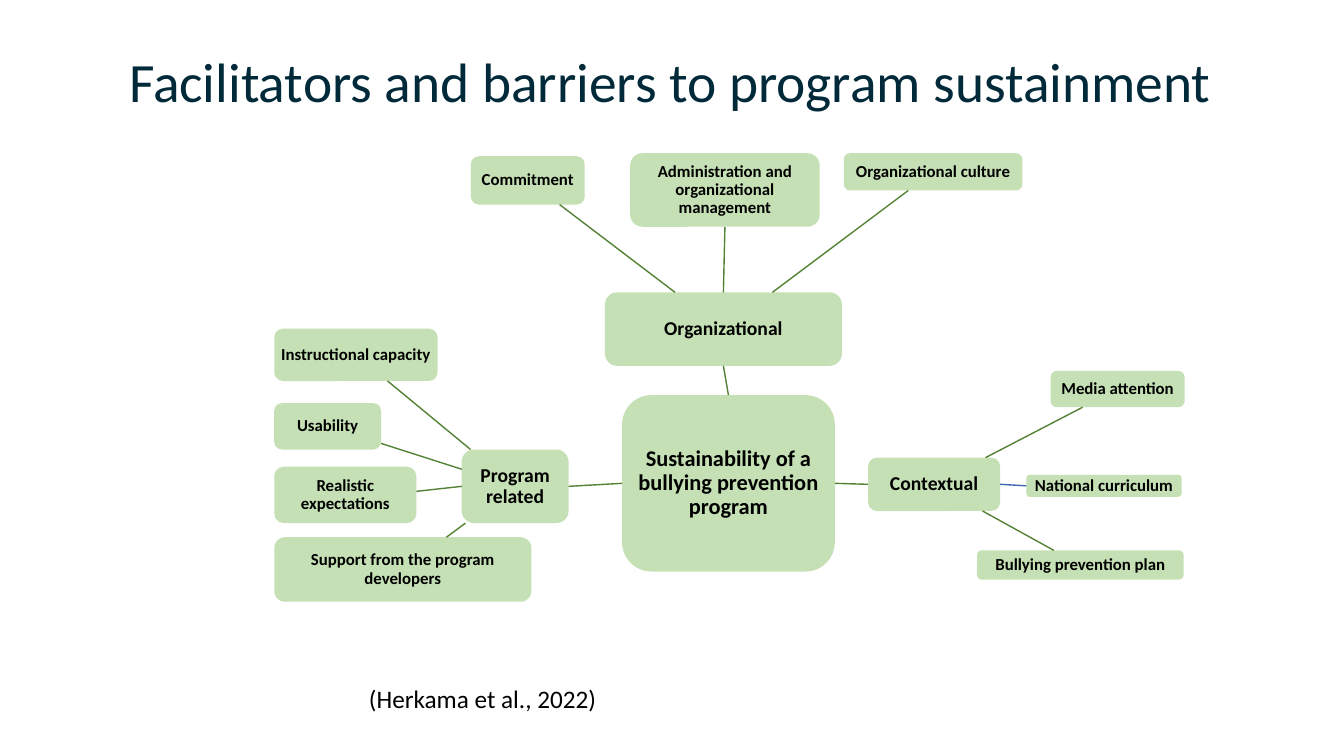
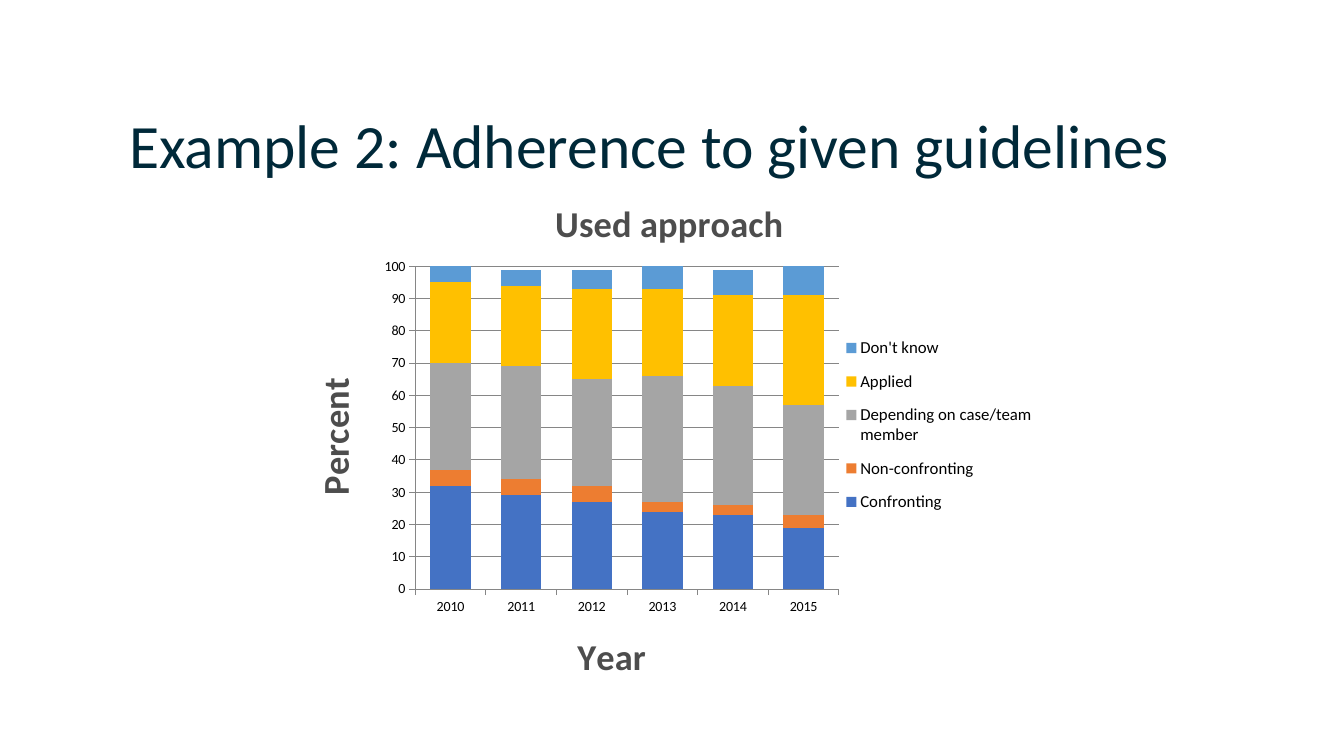
from dataclasses import dataclass

from lxml.etree import SubElement
from pptx import Presentation
from pptx.chart.data import CategoryChartData
from pptx.dml.color import RGBColor
from pptx.enum.chart import XL_CHART_TYPE, XL_LEGEND_POSITION, XL_TICK_MARK
from pptx.enum.shapes import MSO_CONNECTOR, MSO_SHAPE
from pptx.enum.text import MSO_ANCHOR, MSO_AUTO_SIZE, PP_ALIGN
from pptx.oxml.ns import qn
from pptx.util import Inches, Pt


@dataclass(frozen=True)
class Theme:
    """Colours in hex and type sizes in points."""
    font: str = "Calibri"
    title: str = "002939"
    text: str = "000000"
    node: str = "C5E0B4"
    link: str = "548235"
    accent_link: str = "3E67B2"
    heading: str = "4D4D4D"
    grid: str = "868686"
    series: tuple = ("4472C4", "ED7D31", "A5A5A5", "FFC000", "5B9BD5")
    core_size: float = 16
    hub_size: float = 14
    leaf_size: float = 12
    note_size: float = 18
    heading_size: float = 26
    tick_size: float = 10
    legend_size: float = 12


@dataclass(frozen=True)
class Box:
    """A rectangle in inches."""
    x: float
    y: float
    w: float
    h: float

    def inside(self, x, y, w, h):
        """Return a box placed relative to this one's corner."""
        return Box(self.x + x, self.y + y, w, h)

    def emu(self):
        """Return left, top, width and height as lengths."""
        return [Inches(v) for v in (self.x, self.y, self.w, self.h)]


T = Theme()

CORE = ("Sustainability of a bullying prevention program", (3.45, 2.4, 2.11, 1.75))
BRANCHES = [
    (("Organizational", (3.28, 1.38, 2.35, 0.73)), [
        ("Commitment", (1.95, 0.03, 1.13, 0.48)),
        ("Administration and organizational management", (3.53, 0, 1.88, 0.73)),
        ("Organizational culture", (5.65, 0, 1.77, 0.37)),
    ]),
    (("Contextual", (5.89, 3.02, 1.31, 0.53)), [
        ("National curriculum", (7.46, 3.19, 1.54, 0.22)),
        ("Bullying prevention plan", (6.97, 3.94, 2.05, 0.29)),
        ("Media attention", (7.7, 2.16, 1.33, 0.36)),
    ]),
    (("Program related", (1.86, 2.94, 1.06, 0.73)), [
        ("Instructional capacity", (0, 1.74, 1.62, 0.52)),
        ("Usability", (0, 2.48, 1.06, 0.46)),
        ("Realistic expectations", (0, 3.11, 1.41, 0.56)),
        ("Support from the program developers", (0, 3.81, 2.55, 0.64)),
    ]),
]
ACCENT_LEAF = "National curriculum"

YEARS = ["2010", "2011", "2012", "2013", "2014", "2015"]
APPROACHES = [
    ("Confronting", (32, 29, 27, 24, 23, 19)),
    ("Non-confronting", (5, 5, 5, 3, 3, 4)),
    ("Depending on case/team member", (33, 35, 33, 39, 37, 34)),
    ("Applied", (25, 25, 28, 27, 28, 34)),
    ("Don't know", (5, 5, 6, 8, 8, 9)),
]


def style_font(font, size, color, bold=False):
    """Apply the theme typeface with a size, colour and weight."""
    font.name = T.font
    font.size = Pt(size)
    font.bold = bold
    font.color.rgb = RGBColor.from_string(color)


def add_titled_slide(prs, text, box, size):
    """Add a title-only slide with its title in the given box."""
    s = prs.slides.add_slide(prs.slide_layouts[5])
    title = s.shapes.title
    title.left, title.top, title.width, title.height = box.emu()
    tf = title.text_frame
    tf.text = text
    tf.word_wrap = True
    tf.auto_size = MSO_AUTO_SIZE.NONE
    tf.vertical_anchor = MSO_ANCHOR.BOTTOM
    p = tf.paragraphs[0]
    p.alignment = PP_ALIGN.LEFT
    p.line_spacing = 0.9
    style_font(p.runs[0].font, size, T.title)
    return s


def add_node(s, text, box, size):
    """Draw one rounded box of the map with bold centred text."""
    sp = s.shapes.add_shape(MSO_SHAPE.ROUNDED_RECTANGLE, *box.emu())
    sp.shadow.inherit = False
    sp.fill.solid()
    sp.fill.fore_color.rgb = RGBColor.from_string(T.node)
    sp.line.fill.background()
    tf = sp.text_frame
    tf.text = text
    tf.word_wrap = True
    tf.vertical_anchor = MSO_ANCHOR.MIDDLE
    tf.margin_left = tf.margin_right = Inches(0.03)
    tf.margin_top = tf.margin_bottom = Inches(0.03)
    p = tf.paragraphs[0]
    p.alignment = PP_ALIGN.CENTER
    p.line_spacing = 0.9
    style_font(p.runs[0].font, size, T.text, True)
    return sp


def center(sp):
    """Return the middle point of a shape."""
    return sp.left + sp.width / 2, sp.top + sp.height / 2


def edge_point(sp, other):
    """Return where the line to another centre leaves a shape, and its side if at the middle."""
    (x, y), (ox, oy) = center(sp), center(other)
    dx, dy = ox - x, oy - y
    across = abs(dx) * sp.height > abs(dy) * sp.width
    scale = sp.width / 2 / abs(dx) if across else sp.height / 2 / abs(dy)
    offset = scale * (dy if across else dx)
    side = (3 if dx > 0 else 1) if across else (2 if dy > 0 else 0)
    at_middle = abs(offset) < Inches(0.03)
    return int(x + dx * scale), int(y + dy * scale), side if at_middle else None


def add_link(s, start, end, color):
    """Join two nodes by a line along their centres."""
    x1, y1, side1 = edge_point(start, end)
    x2, y2, side2 = edge_point(end, start)
    link = s.shapes.add_connector(MSO_CONNECTOR.STRAIGHT, x1, y1, x2, y2)
    if side1 is not None:
        link.begin_connect(start, side1)
    if side2 is not None:
        link.end_connect(end, side2)
    link.line.color.rgb = RGBColor.from_string(color)
    link.line.width = Pt(1)
    SubElement(link.element.find(qn("p:spPr")), qn("a:effectLst"))


def add_map(s, box):
    """Draw the core, its hubs and their leaves."""
    text, place = CORE
    core = add_node(s, text, box.inside(*place), T.core_size)
    for (hub_text, hub_place), leaves in BRANCHES:
        hub = add_node(s, hub_text, box.inside(*hub_place), T.hub_size)
        add_link(s, core, hub, T.link)
        for leaf_text, leaf_place in leaves:
            leaf = add_node(s, leaf_text, box.inside(*leaf_place), T.leaf_size)
            add_link(s, hub, leaf, T.accent_link if leaf_text == ACCENT_LEAF else T.link)


def add_citation(s, text, box):
    """Write the source note with an indent."""
    tf = s.shapes.add_textbox(*box.emu()).text_frame
    tf.text = text
    tf.word_wrap = True
    tf.margin_left = Inches(0.48)
    style_font(tf.paragraphs[0].runs[0].font, T.note_size, T.text)


def set_heading(holder, text):
    """Give a chart or an axis its bold title."""
    tf = (holder.chart_title if hasattr(holder, "chart_title") else holder.axis_title).text_frame
    tf.text = text
    style_font(tf.paragraphs[0].runs[0].font, T.heading_size, T.heading, True)


def set_layout(parent, index, inner, **fractions):
    """Fix the place of a chart part as fractions of the chart."""
    for old in parent.findall(qn("c:layout")):
        parent.remove(old)
    layout = SubElement(parent, qn("c:layout"))
    parent.insert(index, layout)
    manual = SubElement(layout, qn("c:manualLayout"))
    values = {"layoutTarget": "inner"} if inner else {}
    values.update(xMode="edge", yMode="edge", **fractions)
    for tag, value in values.items():
        SubElement(manual, qn("c:" + tag)).set("val", str(value))


def style_axis(axis, heading):
    """Set an axis title, ticks and line."""
    set_heading(axis, heading)
    axis.major_tick_mark = XL_TICK_MARK.OUTSIDE
    axis.minor_tick_mark = XL_TICK_MARK.NONE
    axis.format.line.color.rgb = RGBColor.from_string(T.grid)
    style_font(axis.tick_labels.font, T.tick_size, T.text)


def add_approach_chart(s, box):
    """Draw the stacked columns of approaches by year."""
    data = CategoryChartData()
    data.categories = YEARS
    for name, values in APPROACHES:
        data.add_series(name, values)
    chart = s.shapes.add_chart(XL_CHART_TYPE.COLUMN_STACKED, *box.emu(), data).chart
    style_font(chart.font, T.tick_size, T.text)
    set_heading(chart, "Used approach")
    plot = chart.plots[0]
    plot.gap_width = 75
    plot.overlap = 100
    plot.vary_by_categories = False
    for series, color in zip(plot.series, T.series):
        series.format.fill.solid()
        series.format.fill.fore_color.rgb = RGBColor.from_string(color)
    style_axis(chart.category_axis, "Year")
    axis = chart.value_axis
    style_axis(axis, "Percent")
    axis.minimum_scale, axis.maximum_scale, axis.major_unit = 0, 100, 10
    axis.has_major_gridlines = True
    axis.major_gridlines.format.line.color.rgb = RGBColor.from_string(T.grid)
    chart.has_legend = True
    chart.legend.position = XL_LEGEND_POSITION.RIGHT
    chart.legend.include_in_layout = False
    style_font(chart.legend.font, T.legend_size, T.text)
    set_layout(chart.element.find(".//" + qn("c:plotArea")), 0, True, x=0.17, y=0.17, w=0.55, h=0.61)
    set_layout(chart.element.find(".//" + qn("c:legend")), 1, False, x=0.72, y=0.28, w=0.26, h=0.38)


def main():
    """Build the two slides and save them."""
    prs = Presentation()
    prs.slide_width, prs.slide_height = Inches(13.33), Inches(7.5)

    s = add_titled_slide(prs, "Facilitators and barriers to program sustainment",
                         Box(1.18, -0.18, 11.09, 1.37), 39.6)
    add_map(s, Box(2.72, 1.52, 9.03, 4.45))
    add_citation(s, "(Herkama et al., 2022)", Box(3.18, 6.73, 5.14, 0.4))

    s = add_titled_slide(prs, "Example 2: Adherence to given guidelines",
                         Box(1.18, 0.48, 11.09, 1.37), 44)
    add_approach_chart(s, Box(2.82, 1.75, 7.64, 5.25))

    prs.save("out.pptx")


if __name__ == "__main__":
    main()
